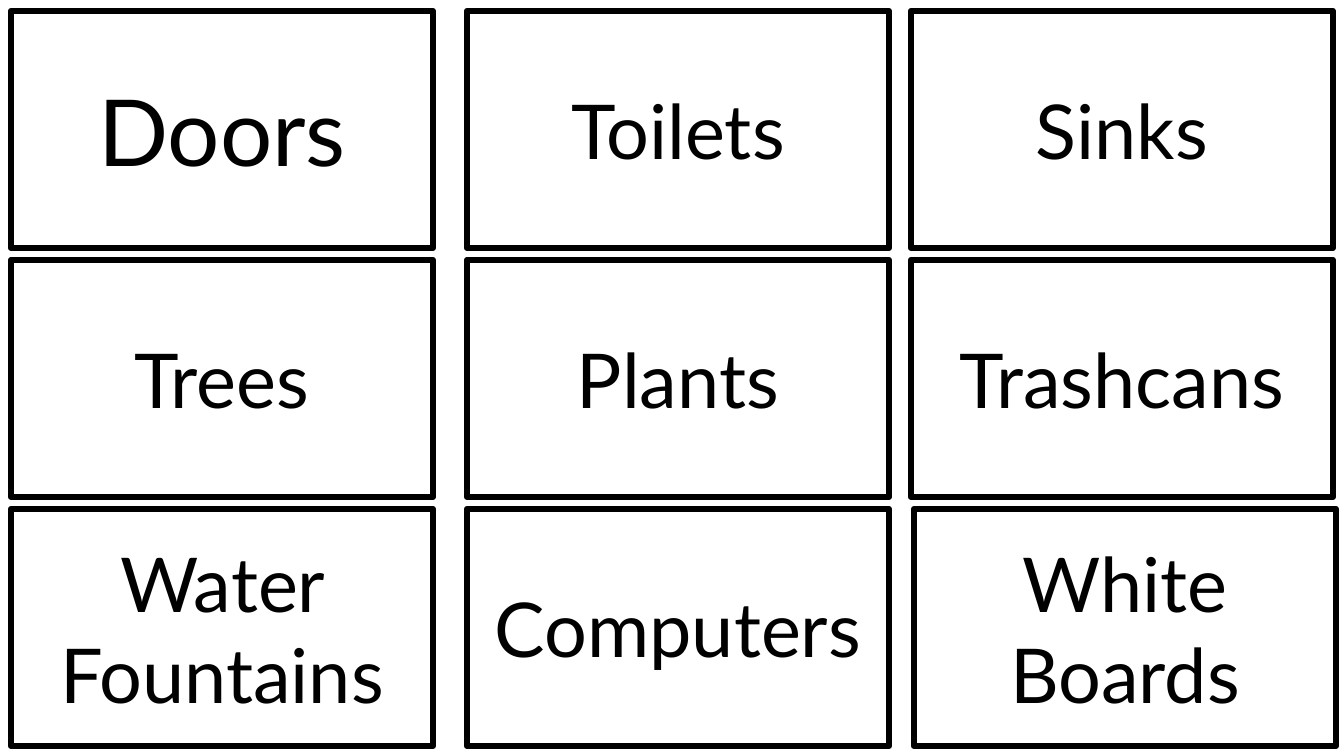
from pptx import Presentation
from pptx.dml.color import RGBColor
from pptx.enum.shapes import MSO_SHAPE
from pptx.enum.text import MSO_ANCHOR, MSO_AUTO_SIZE, PP_ALIGN
from pptx.util import Emu, Pt

EMU_PER_PX = 914400 / 100.8


def px(length):
    return Emu(round(length * EMU_PER_PX))


def color(hex_value):
    return RGBColor.from_string(hex_value)


class CardSheet:
    font = "Lato"
    ink = "000000"
    paper = "FFFFFF"
    border = 4.5

    def __init__(self, slide):
        self.slide = slide

    def add_words(self, frame, words, size):
        frame.word_wrap = True
        paragraph = frame.paragraphs[0]
        paragraph.alignment = PP_ALIGN.CENTER
        run = paragraph.add_run()
        run.text = words
        run.font.name = self.font
        run.font.size = Pt(size)
        run.font.color.rgb = color(self.ink)

    def card(self, left, top, width, height, words=None, size=54):
        card = self.slide.shapes.add_shape(
            MSO_SHAPE.RECTANGLE, px(left), px(top), px(width), px(height))
        card.shadow.inherit = False
        card.fill.solid()
        card.fill.fore_color.rgb = color(self.paper)
        card.line.color.rgb = color(self.ink)
        card.line.width = Pt(self.border)
        if words:
            card.text_frame.vertical_anchor = MSO_ANCHOR.MIDDLE
            self.add_words(card.text_frame, words, size)

    def label(self, left, top, width, height, words, size):
        label = self.slide.shapes.add_textbox(
            px(left), px(top), px(width), px(height))
        self.add_words(label.text_frame, words, size)
        label.text_frame.auto_size = MSO_AUTO_SIZE.SHAPE_TO_FIT_TEXT


CARD_WIDTH, CARD_HEIGHT = 422, 237
FIRST_TOP, ROW_STEP = 11, 249

# Each column: left edge and its words from top to bottom
COLUMNS = [
    (11, [None, "Trees", "Water Fountains"]),
    (467, ["Toilets", "Plants", "Computers"]),
    (911, ["Sinks", "Trashcans", "White Boards"]),
]
# The last card sits slightly to the right of its column
NUDGES = {"White Boards": 3}


def main():
    deck = Presentation()
    deck.slide_width, deck.slide_height = px(1344), px(756)
    sheet = CardSheet(deck.slides.add_slide(deck.slide_layouts[6]))

    # Grid of word cards
    for left, column_words in COLUMNS:
        for row, words in enumerate(column_words):
            sheet.card(left + NUDGES.get(words, 0), FIRST_TOP + row * ROW_STEP,
                       CARD_WIDTH, CARD_HEIGHT, words)

    # Larger word on the first card
    sheet.label(18, 69, 408, 122, "Doors", 66)

    deck.save("out.pptx")


if __name__ == "__main__":
    main()
